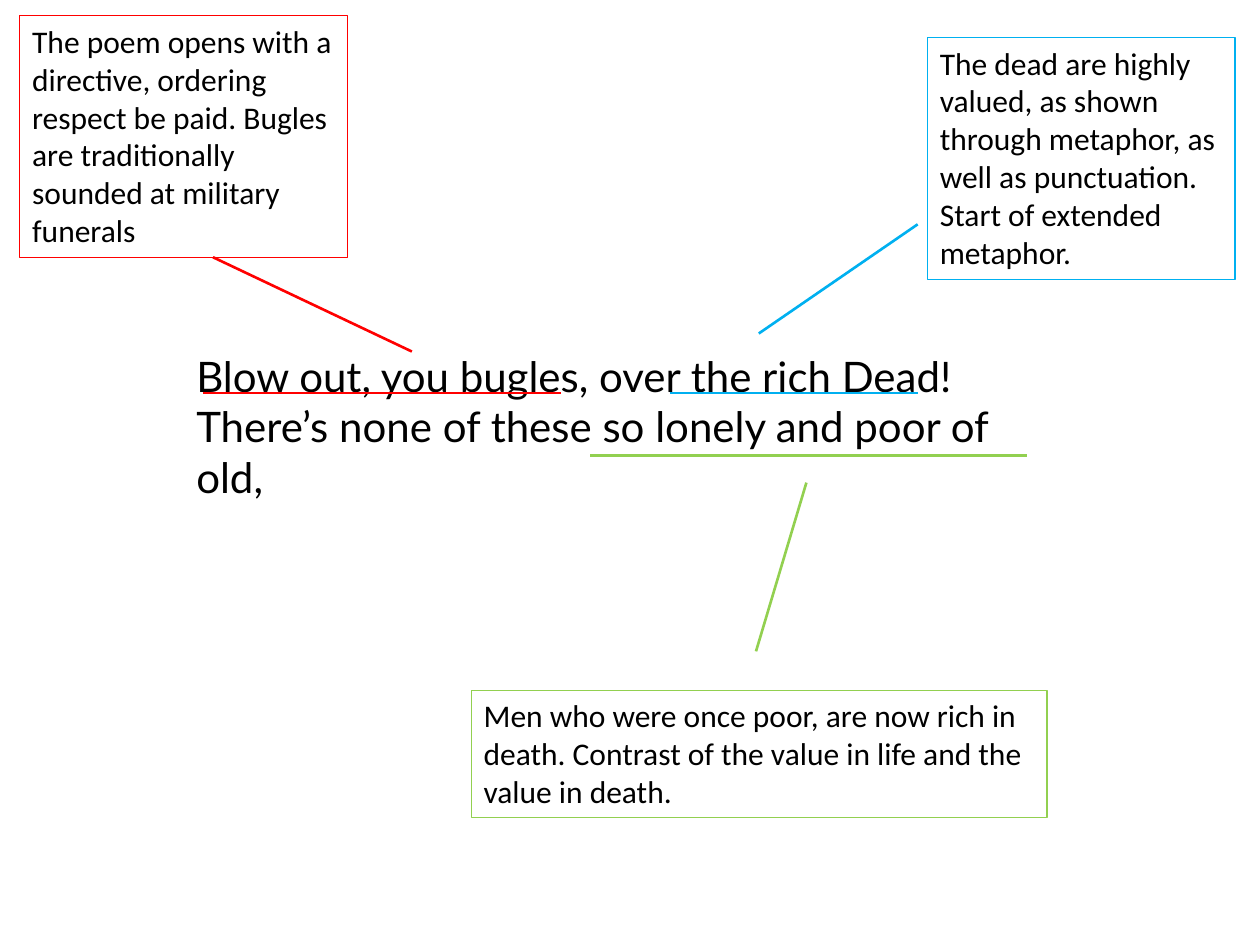
"""Build an annotated two-line poem extract with three linked comments."""
from lxml.etree import SubElement
from pptx import Presentation
from pptx.dml.color import RGBColor
from pptx.enum.shapes import MSO_CONNECTOR
from pptx.enum.text import MSO_ANCHOR, MSO_AUTO_SIZE, PP_ALIGN
from pptx.oxml.ns import qn
from pptx.util import Pt

BLACK = RGBColor(0x00, 0x00, 0x00)
RED = RGBColor(0xFF, 0x00, 0x00)
BLUE = RGBColor(0x00, 0xB0, 0xF0)
GREEN = RGBColor(0x92, 0xD0, 0x50)

POEM = [
    "Blow out, you bugles, over the rich Dead!",
    "There’s none of these so lonely and poor of old,",
]
POEM_BOX = (105.1, 196.6, 499, 94.3)
POEM_FORMAT = {"name": "Lato", "size": Pt(24)}
COMMENT_FORMAT = {"name": "Calibri", "size": Pt(18)}

ANNOTATIONS = [
    {
        "text": "The poem opens with a directive, ordering respect be paid. "
                "Bugles are traditionally sounded at military funerals",
        "color": RED,
        "box": (11.3, 9, 187.2, 138.2),
        "underline": (116, 224.6, 320.4, 224.6),
        "pointer": (121.7, 147, 235.4, 200.9),
    },
    {
        "text": "The dead are highly valued, as shown through metaphor, "
                "as well as punctuation. Start of extended metaphor.",
        "color": BLUE,
        "box": (530, 21.4, 175.8, 138.2),
        "underline": (382.6, 224.6, 524.4, 224.6),
        "pointer": (433.6, 190.6, 524.4, 128.2),
    },
    {
        "text": "Men who were once poor, are now rich in death. "
                "Contrast of the value in life and the value in death.",
        "color": GREEN,
        "box": (269.3, 394.4, 329, 72.7),
        "underline": (337.4, 260.2, 586.8, 260.2),
        "pointer": (460.8, 275.8, 432, 372.2),
    },
]


def add_text(slide, lines, box, font_format):
    shape = slide.shapes.add_textbox(*map(Pt, box))
    frame = shape.text_frame
    frame.word_wrap = True
    frame.auto_size = MSO_AUTO_SIZE.SHAPE_TO_FIT_TEXT
    frame.vertical_anchor = MSO_ANCHOR.TOP
    paragraph = frame.paragraphs[0]
    paragraph.alignment = PP_ALIGN.LEFT
    for index, line in enumerate(lines):
        if index:
            paragraph.add_line_break()
        run = paragraph.add_run()
        run.text = line
        run.font.color.rgb = BLACK
        for attribute, value in font_format.items():
            setattr(run.font, attribute, value)
    return shape


def add_line(slide, ends, color):
    connector = slide.shapes.add_connector(MSO_CONNECTOR.STRAIGHT, *map(Pt, ends))
    connector.line.color.rgb = color
    connector.line.width = Pt(1.5)
    SubElement(connector.element.spPr, qn("a:effectLst"))


def main():
    presentation = Presentation()
    presentation.slide_width, presentation.slide_height = Pt(720), Pt(540)
    slide = presentation.slides.add_slide(presentation.slide_layouts[6])
    add_text(slide, POEM, POEM_BOX, POEM_FORMAT)
    for annotation in ANNOTATIONS:
        for part in ("underline", "pointer"):
            add_line(slide, annotation[part], annotation["color"])
        comment = add_text(slide, [annotation["text"]], annotation["box"], COMMENT_FORMAT)
        comment.line.color.rgb = annotation["color"]
        comment.line.width = Pt(0.75)
    presentation.save("out.pptx")


if __name__ == "__main__":
    main()
